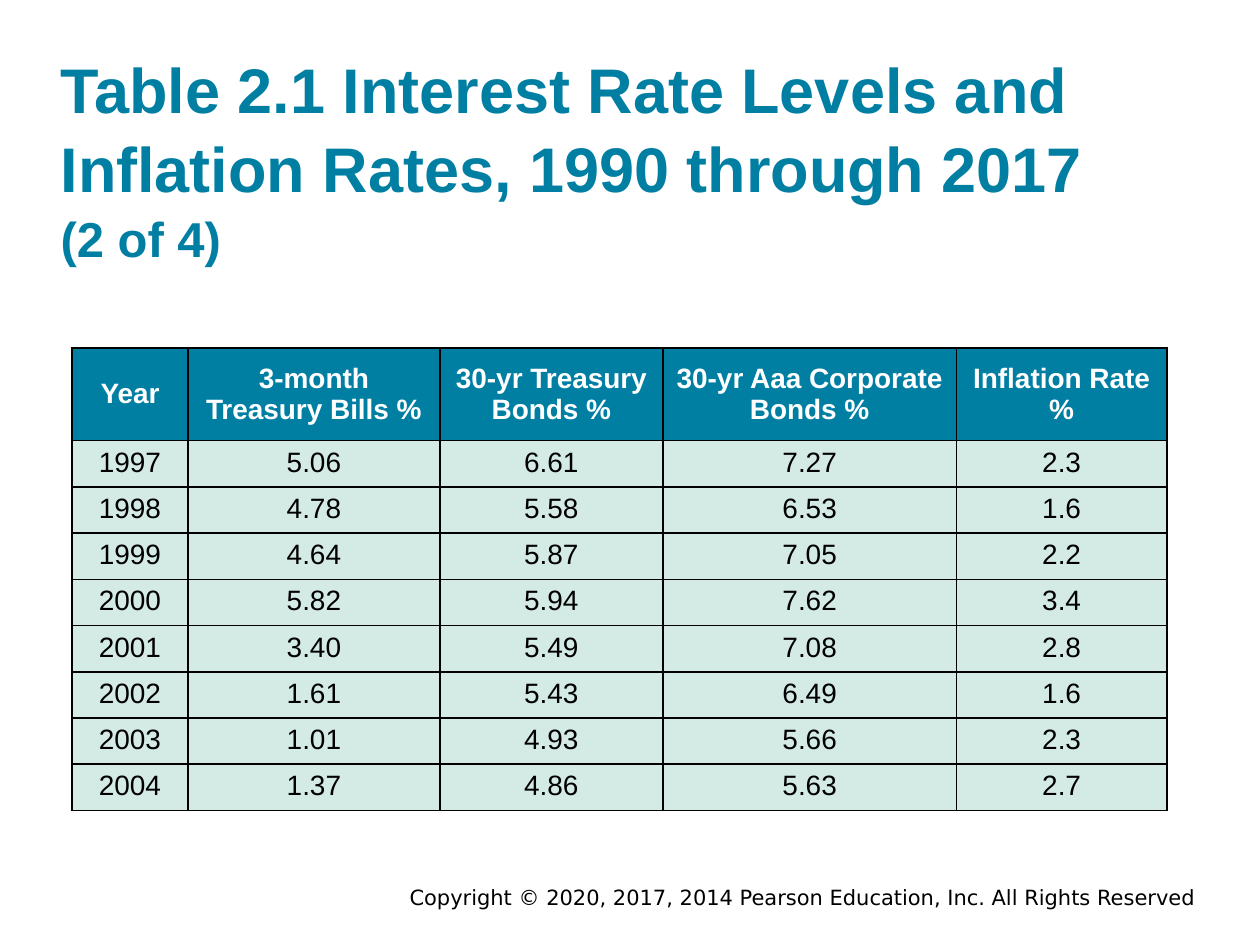
import pptx
import pptx.dml.color
import pptx.enum.text
import pptx.oxml
import pptx.oxml.ns
import pptx.util

Pt = pptx.util.Pt
RGBColor = pptx.dml.color.RGBColor
Align = pptx.enum.text.PP_ALIGN
Anchor = pptx.enum.text.MSO_ANCHOR
AutoSize = pptx.enum.text.MSO_AUTO_SIZE

TEAL = RGBColor(0x00, 0x7F, 0xA3)
MINT = RGBColor(0xD4, 0xEA, 0xE4)
WHITE = RGBColor(0xFF, 0xFF, 0xFF)
BLACK = RGBColor(0x00, 0x00, 0x00)

TITLE_RUNS = [
    ("Table 2.1 Interest Rate Levels and Inflation Rates, 1990 through 2017 ", 36),
    ("(2 of 4)", 28),
]
COPYRIGHT = "Copyright © 2020, 2017, 2014 Pearson Education, Inc. All Rights Reserved"
HEADERS = [
    "Year",
    "3-month Treasury Bills %",
    "30-yr Treasury Bonds %",
    "30-yr Aaa Corporate Bonds %",
    "Inflation Rate %",
]
RATES = [
    ("1997", "5.06", "6.61", "7.27", "2.3"),
    ("1998", "4.78", "5.58", "6.53", "1.6"),
    ("1999", "4.64", "5.87", "7.05", "2.2"),
    ("2000", "5.82", "5.94", "7.62", "3.4"),
    ("2001", "3.40", "5.49", "7.08", "2.8"),
    ("2002", "1.61", "5.43", "6.49", "1.6"),
    ("2003", "1.01", "4.93", "5.66", "2.3"),
    ("2004", "1.37", "4.86", "5.63", "2.7"),
]
COLUMN_WIDTHS = [66.2, 144, 127.4, 167.8, 120.2]
HEADER_HEIGHT = 53
ROW_HEIGHT = 26.4


def add_run(paragraph, text, size, color, bold=False, font_name="Arial"):
    run = paragraph.add_run()
    run.text = text
    run.font.name = font_name
    run.font.size = Pt(size)
    run.font.bold = bold
    run.font.color.rgb = color


def add_borders(cell):
    properties = cell._tc.get_or_add_tcPr()
    for index, side in enumerate(("lnL", "lnR", "lnT", "lnB")):
        border = pptx.oxml.parse_xml(
            f'<a:{side} {pptx.oxml.ns.nsdecls("a")} w="{Pt(1)}">'
            f'<a:solidFill><a:srgbClr val="{BLACK}"/></a:solidFill></a:{side}>'
        )
        properties.insert(index, border)


def add_title(slide):
    title = slide.shapes.title
    title.left, title.top, title.width, title.height = Pt(34.6), Pt(31.7), Pt(618.5), Pt(121)
    frame = title.text_frame
    frame.margin_left = frame.margin_right = frame.margin_top = frame.margin_bottom = 0
    frame.word_wrap = True
    frame.auto_size = AutoSize.SHAPE_TO_FIT_TEXT
    frame.vertical_anchor = Anchor.BOTTOM
    paragraph = frame.paragraphs[0]
    paragraph.alignment = Align.LEFT
    paragraph.line_spacing = 1.05
    for text, size in TITLE_RUNS:
        add_run(paragraph, text, size, TEAL, bold=True)


def add_copyright(slide):
    box = slide.shapes.add_textbox(Pt(126.7), Pt(501.8), Pt(563.8), Pt(21.6))
    frame = box.text_frame
    frame.word_wrap = True
    frame.auto_size = AutoSize.SHAPE_TO_FIT_TEXT
    paragraph = frame.paragraphs[0]
    paragraph.alignment = Align.RIGHT
    add_run(paragraph, COPYRIGHT, 12, BLACK, font_name="DejaVu Sans")


def add_rates_table(slide):
    rows = [HEADERS] + RATES
    row_heights = [HEADER_HEIGHT] + [ROW_HEIGHT] * len(RATES)
    table = slide.shapes.add_table(
        len(rows), len(HEADERS), Pt(41.2), Pt(198.8),
        Pt(sum(COLUMN_WIDTHS)), Pt(sum(row_heights)),
    ).table
    table.horz_banding = False
    for column, width in zip(table.columns, COLUMN_WIDTHS):
        column.width = Pt(width)
    for row_index, (row, height) in enumerate(zip(rows, row_heights)):
        is_header = row_index == 0
        table.rows[row_index].height = Pt(height)
        for column_index, text in enumerate(row):
            cell = table.cell(row_index, column_index)
            cell.fill.solid()
            cell.fill.fore_color.rgb = TEAL if is_header else MINT
            cell.vertical_anchor = Anchor.MIDDLE if is_header else Anchor.TOP
            add_borders(cell)
            paragraph = cell.text_frame.paragraphs[0]
            paragraph.alignment = Align.CENTER
            add_run(paragraph, text, 16, WHITE if is_header else BLACK, bold=is_header)


def main():
    presentation = pptx.Presentation()
    presentation.slide_width = Pt(720)
    presentation.slide_height = Pt(540)
    slide = presentation.slides.add_slide(presentation.slide_layouts[5])
    slide.background.fill.solid()
    slide.background.fill.fore_color.rgb = WHITE
    add_copyright(slide)
    add_title(slide)
    add_rates_table(slide)
    presentation.save("out.pptx")


if __name__ == "__main__":
    main()
